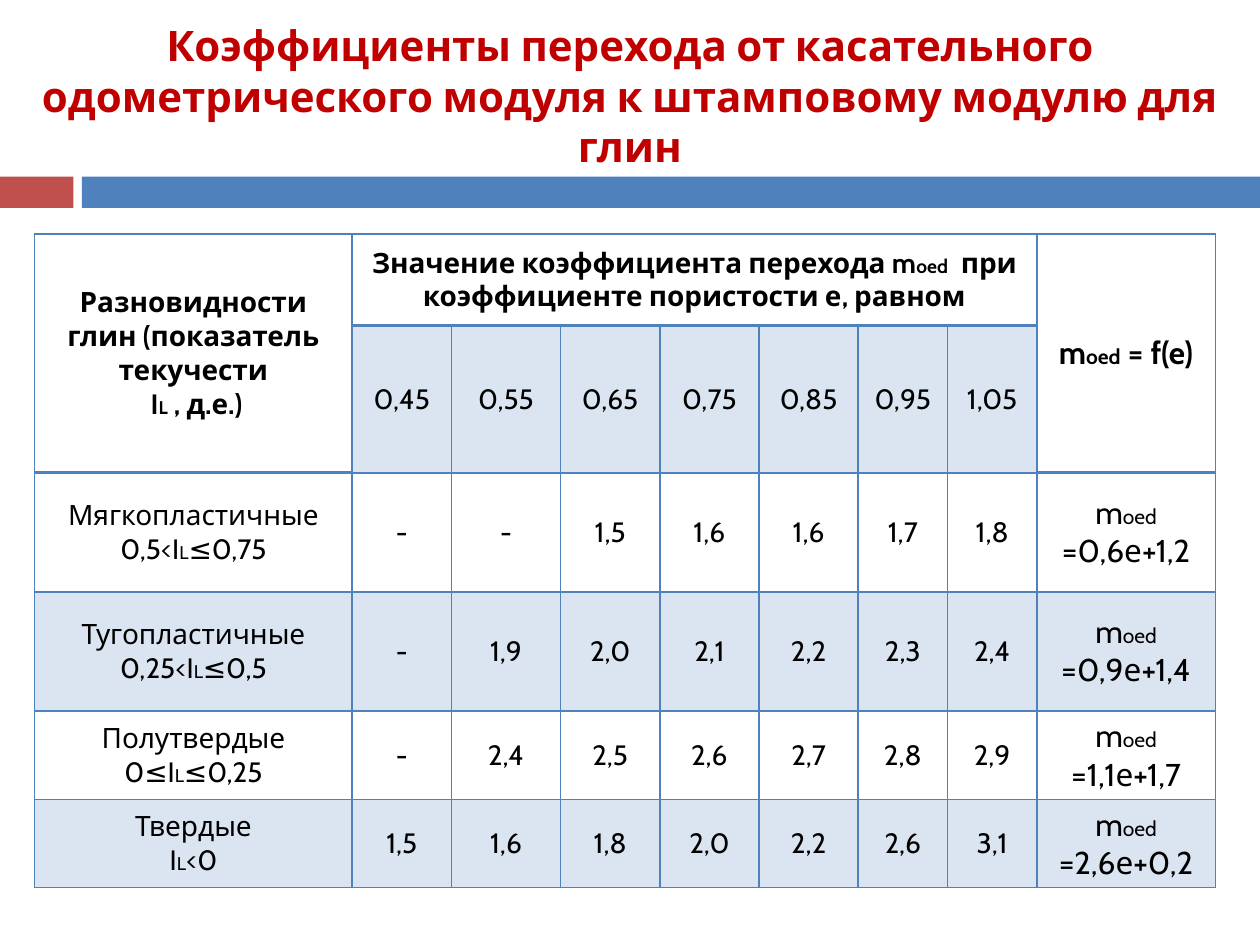
from lxml import etree
from pptx import Presentation, util as u
from pptx.dml.color import RGBColor
from pptx.enum import shapes, text
from pptx.oxml.ns import qn

BLUE, RED, TITLE_RED, BLACK = "4F81BD", "C0504D", "C00000", "000000"
FONT = "Cabin"


def write(frame, lines, size, small, bold=False, color=BLACK):
    """Centre the lines; pieces between underscores take the small size."""
    frame.word_wrap = True
    frame.vertical_anchor = text.MSO_ANCHOR.MIDDLE
    for i, line in enumerate(lines.split("\n")):
        paragraph = frame.paragraphs[0] if i == 0 else frame.add_paragraph()
        paragraph.alignment = text.PP_ALIGN.CENTER
        paragraph.font.name = FONT
        paragraph.font.bold = bold
        paragraph.font.size = u.Pt(size)
        paragraph.font.color.rgb = RGBColor.from_string(color)
        for j, piece in enumerate(line.split("_")):
            run = paragraph.add_run()
            run.text = piece
            run.font.name = FONT
            run.font.bold = bold
            run.font.size = u.Pt(small if j % 2 else size)
            run.font.color.rgb = RGBColor.from_string(color)


def style_cell(cell, tinted, bottom_width):
    """Draw the four borders, then a fifth-strength blue fill or none."""
    props = cell._tc.get_or_add_tcPr()
    for side, width in (("L", 1), ("R", 1), ("T", 1), ("B", bottom_width)):
        line = etree.SubElement(props, qn(f"a:ln{side}"), w=str(u.Pt(width)))
        solid = etree.SubElement(line, qn("a:solidFill"))
        etree.SubElement(solid, qn("a:srgbClr"), val=BLUE)
    if tinted:
        cell.fill.solid()
        cell.fill.fore_color.rgb = RGBColor.from_string(BLUE)
        tint = props.find(qn("a:solidFill")).find(qn("a:srgbClr"))
        etree.SubElement(tint, qn("a:alpha"), val="20000")
    else:
        cell.fill.background()


prs = Presentation()
prs.slide_width, prs.slide_height = u.Cm(25.4), u.Cm(19.05)
slide = prs.slides.add_slide(prs.slide_layouts[6])

# Divider under the title
for left, width, color in ((0, 1.48, RED), (1.65, 23.75, BLUE)):
    bar = slide.shapes.add_shape(shapes.MSO_SHAPE.RECTANGLE,
                                 u.Cm(left), u.Cm(3.56), u.Cm(width), u.Cm(0.63))
    bar.shadow.inherit = False
    bar.fill.solid()
    bar.fill.fore_color.rgb = RGBColor.from_string(color)
    bar.line.fill.background()

title = slide.shapes.add_textbox(u.Cm(0), u.Cm(0.33), u.Cm(25.4), u.Cm(3.18))
write(title.text_frame,
      "Коэффициенты перехода от касательного одометрического модуля "
      "к штамповому модулю для глин", 24, 24, bold=True, color=TITLE_RED)

# Coefficient table
header = ["Разновидности глин (показатель текучести\n I_L_ , д.е.)",
          "Значение коэффициента перехода m_oed_  при коэффициенте пористости е, равном",
          *[""] * 6, "m_oed_ = f(e)"]
porosity = ["", *"0,45 0,55 0,65 0,75 0,85 0,95 1,05".split(), ""]
clays = [
    ("Мягкопластичные\n0,5<I_L_≤0,75", "- - 1,5 1,6 1,6 1,7 1,8", "0,6е+1,2"),
    ("Тугопластичные\n0,25<I_L_≤0,5", "- 1,9 2,0 2,1 2,2 2,3 2,4", "0,9е+1,4"),
    ("Полутвердые\n0≤I_L_≤0,25", "- 2,4 2,5 2,6 2,7 2,8 2,9", "1,1е+1,7"),
    ("Твердые\nI_L_<0", "1,5 1,6 1,8 2,0 2,2 2,6 3,1", "2,6е+0,2"),
]
rows = [header, porosity] + [
    [clay, *values.split(), f"m_oed_ ={formula}"] for clay, values, formula in clays]
last = len(header) - 1

table_frame = slide.shapes.add_table(len(rows), len(header), u.Cm(0.7), u.Cm(4.72),
                                     u.Cm(23.8), u.Cm(12.52))
table = table_frame.table
for column, width in zip(table.columns, (6.4, 2, 2.2, 2, 2, 2, 1.8, 1.8, 3.6)):
    column.width = u.Cm(width)
for row, height in zip(table.rows, (1.85, 2.4, 2.4, 2.4, 1.37, 1.37)):
    row.height = u.Cm(height)
table_frame.height = u.Cm(12.52)

for r, row in enumerate(rows):
    for c, content in enumerate(row):
        cell = table.cell(r, c)
        in_header = r == 0 or (r == 1 and c in (0, last))
        style_cell(cell, r % 2 == 1 and not in_header, 2 if in_header else 1)
        cell.vertical_anchor = text.MSO_ANCHOR.MIDDLE
        if content:
            size, small = (18, 12) if c == last else (16, 11 if c else 10.5)
            write(cell.text_frame, content, size, small, bold=r == 0)

table.cell(0, 0).merge(table.cell(1, 0))
table.cell(0, 1).merge(table.cell(0, last - 1))
table.cell(0, last).merge(table.cell(1, last))

prs.save("out.pptx")
